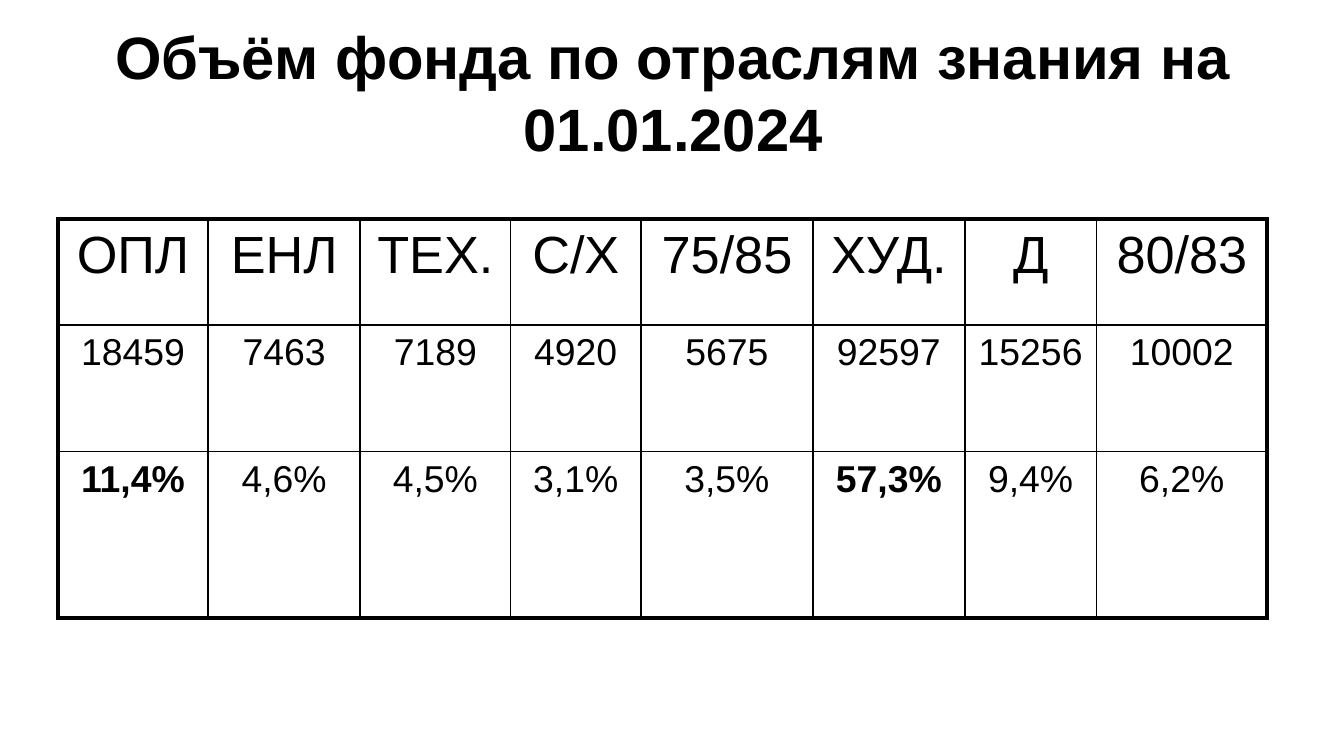
import pptx
import pptx.util
import pptx.dml.color
import pptx.enum.text
import pptx.oxml
import pptx.oxml.ns
from dataclasses import dataclass

Inches = pptx.util.Inches
Pt = pptx.util.Pt


@dataclass
class Theme:
    ink: str = "000000"
    paper: str = "FFFFFF"
    face: str = "Arial"
    title: float = 32
    head: float = 28
    body: float = 20
    thick: float = 2.25
    thin: float = 1


theme = Theme()


def write(frame, text, size, bold):
    par = frame.paragraphs[0]
    par.alignment = pptx.enum.text.PP_ALIGN.CENTER
    run = par.add_run()
    run.text = text
    look = {"name": theme.face, "size": Pt(size), "bold": bold}
    for key, value in look.items():
        setattr(run.font, key, value)
    run.font.color.rgb = pptx.dml.color.RGBColor.from_string(theme.ink)


def border(cell, side, width):
    line = pptx.oxml.parse_xml(
        f'<a:ln{side} {pptx.oxml.ns.nsdecls("a")} w="{Pt(width)}">'
        f'<a:solidFill><a:srgbClr val="{theme.ink}"/></a:solidFill></a:ln{side}>'
    )
    cell._tc.get_or_add_tcPr().append(line)


deck = pptx.Presentation()
deck.slide_width = Inches(10)
deck.slide_height = Inches(10) * 9 // 16
slide = deck.slides.add_slide(deck.slide_layouts[6])

box = slide.shapes.add_textbox(Inches(0.51), Inches(0.21), Inches(9), Inches(0.94))
frame = box.text_frame
layout = {
    "word_wrap": True,
    "vertical_anchor": pptx.enum.text.MSO_ANCHOR.MIDDLE,
    "margin_top": 0,
    "margin_bottom": 0,
}
for key, value in layout.items():
    setattr(frame, key, value)
write(frame, "Объём фонда по отраслям знания на 01.01.2024", theme.title, True)

rows = [
    ["ОПЛ", "ЕНЛ", "ТЕХ.", "С/Х", "75/85", "ХУД.", "Д", "80/83"],
    ["18459", "7463", "7189", "4920", "5675", "92597", "15256", "10002"],
    ["11,4%", "4,6%", "4,5%", "3,1%", "3,5%", "57,3%", "9,4%", "6,2%"],
]
widths = [1.12, 1.13, 1.12, 0.97, 1.28, 1.13, 0.98, 1.27]
heights = [0.79, 0.94, 1.24]
strong = {"11,4%", "57,3%"}

table = slide.shapes.add_table(
    len(rows), len(widths), Inches(0.43), Inches(1.63), Inches(9), Inches(2.97)
).table
for key in ("first_row", "horz_banding"):
    setattr(table, key, False)
for col, width in zip(table.columns, widths):
    col.width = Inches(width)
for row, height in zip(table.rows, heights):
    row.height = Inches(height)

for r, texts in enumerate(rows):
    for c, text in enumerate(texts):
        cell = table.cell(r, c)
        size = theme.head if r == 0 else theme.body
        write(cell.text_frame, text, size, text in strong)
        edges = {
            "L": c == 0,
            "R": c == len(widths) - 1,
            "T": r == 0,
            "B": r == len(rows) - 1,
        }
        for side, outer in edges.items():
            border(cell, side, theme.thick if outer else theme.thin)
        cell.fill.solid()
        cell.fill.fore_color.rgb = pptx.dml.color.RGBColor.from_string(theme.paper)

deck.save("out.pptx")
